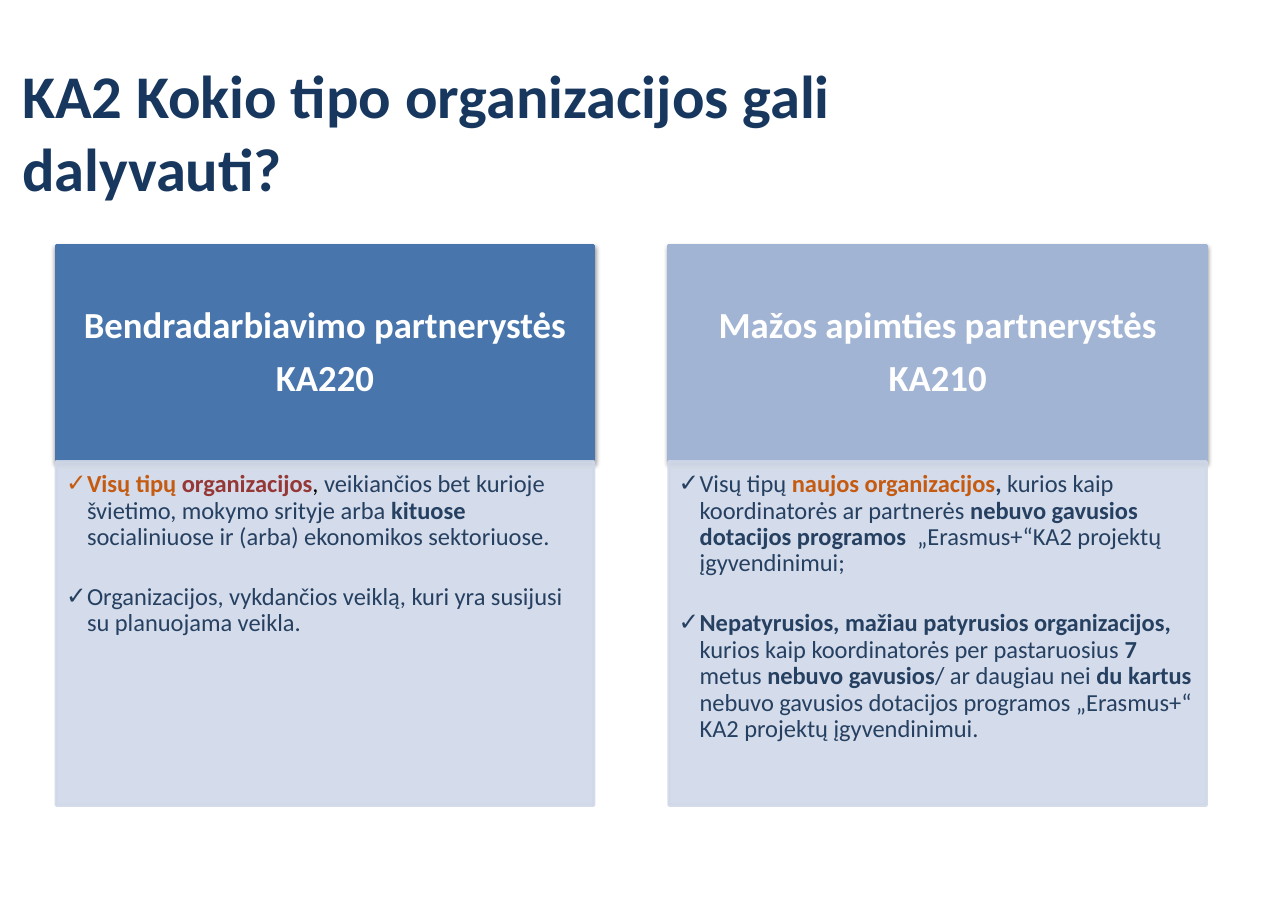
from lxml import etree
from pptx import Presentation
from pptx.dml.color import RGBColor
from pptx.enum import shapes, text
from pptx.oxml import parse_xml
from pptx.oxml.ns import nsdecls, qn
from pptx.util import Inches, Pt

NAVY = RGBColor(0x17, 0x37, 0x5E)
INK = RGBColor(0x25, 0x40, 0x61)
BLUE = RGBColor(0x48, 0x75, 0xAC)
PALE_BLUE = RGBColor(0xA2, 0xB4, 0xD4)
PANEL = RGBColor(0xD0, 0xD8, 0xE8)
ORANGE = RGBColor(0xC5, 0x5A, 0x11)
RED = RGBColor(0x95, 0x37, 0x35)
BLACK = RGBColor(0, 0, 0)
WHITE = RGBColor(0xFF, 0xFF, 0xFF)

COL_W, HEAD_H, BODY_H = 4.88, 1.95, 3.12
COL_X, COL_Y, COL_STEP = 0.51, 2.23, 5.56

# Each run is (text, format); plain dark text is the default
B = dict(bold=True)
COLUMNS = [
    (BLUE, ["Bendradarbiavimo partnerystės", "KA220"], [
        [("Visų tipų ", dict(bold=True, color=ORANGE)),
         ("organizacijos", dict(bold=True, color=RED)),
         (", ", dict(color=BLACK)),
         ("veikiančios bet kurioje švietimo, mokymo srityje arba ", {}),
         ("kituose", B),
         (" socialiniuose ir (arba) ekonomikos sektoriuose.", {})],
        [("Organizacijos, vykdančios veiklą, kuri yra susijusi su planuojama veikla.", {})],
    ]),
    (PALE_BLUE, ["Mažos apimties partnerystės", "KA210"], [
        [("Visų tipų ", {}),
         ("naujos organizacijos", dict(bold=True, color=ORANGE)),
         (", ", B),
         ("kurios kaip koordinatorės ar partnerės ", {}),
         ("nebuvo gavusios dotacijos programos", B),
         ("  „Erasmus+“KA2 projektų įgyvendinimui;", {})],
        [("Nepatyrusios, mažiau patyrusios organizacijos, ", B),
         ("kurios kaip koordinatorės per pastaruosius ", {}),
         ("7 ", B),
         ("metus ", {}),
         ("nebuvo gavusios", B),
         ("/ ar daugiau nei ", {}),
         ("du kartus", B),
         (" nebuvo gavusios dotacijos programos „Erasmus+“ KA2 projektų įgyvendinimui.", {})],
    ]),
]


def add_run(p, words, size=16, color=INK, bold=False):
    r = p.add_run()
    r.text = words
    r.font.name = "Calibri"
    r.font.size = Pt(size)
    r.font.bold = bold
    r.font.color.rgb = color


def place(sp, x, y, w, h):
    sp.left, sp.top, sp.width, sp.height = (Inches(v) for v in (x, y, w, h))


def set_frame(tf, anchor, left, top, right, bottom):
    tf.word_wrap = True
    tf.auto_size = text.MSO_AUTO_SIZE.NONE
    tf.vertical_anchor = anchor
    tf.margin_left, tf.margin_top = Inches(left), Inches(top)
    tf.margin_right, tf.margin_bottom = Inches(right), Inches(bottom)


def paint(sp, color, opacity=100):
    sp.fill.solid()
    sp.fill.fore_color.rgb = color
    sp.line.color.rgb = color
    sp.line.width = Pt(2)
    if opacity < 100:
        for clr in sp.element.spPr.iter(qn("a:srgbClr")):
            etree.SubElement(clr, qn("a:alpha")).set("val", str(opacity * 1000))


def add_shadow(sp):
    sp.element.spPr.append(parse_xml(
        f'<a:effectLst {nsdecls("a")}>'
        f'<a:outerShdw blurRad="{Pt(3.1)}" dist="{Pt(1.6)}" dir="5400000" rotWithShape="0">'
        '<a:srgbClr val="000000"><a:alpha val="38000"/></a:srgbClr>'
        '</a:outerShdw></a:effectLst>'))


def add_check_bullet(p):
    pPr = p._p.get_or_add_pPr()
    pPr.set("marL", str(Inches(0.19)))
    pPr.set("indent", str(-Inches(0.19)))
    etree.SubElement(pPr, qn("a:buChar")).set("char", "✓")


def fill_title(sp, x, y, w, h):
    place(sp, x, y, w, h)
    set_frame(sp.text_frame, text.MSO_ANCHOR.MIDDLE, 0.11, 0.06, 0.11, 0.06)
    p = sp.text_frame.paragraphs[0]
    p.alignment = text.PP_ALIGN.LEFT
    add_run(p, "KA2 Kokio tipo organizacijos gali dalyvauti?", 39.6, NAVY, True)


def fill_column(s, body, x, y, color, heading, items):
    # Heading block
    head = s.shapes.add_shape(shapes.MSO_SHAPE.RECTANGLE, 0, 0, 0, 0)
    place(head, x, y, COL_W, HEAD_H)
    paint(head, color)
    add_shadow(head)
    body.element.addprevious(head.element)
    tf = head.text_frame
    set_frame(tf, text.MSO_ANCHOR.MIDDLE, 0.19, 0.11, 0.19, 0.11)
    for i, line in enumerate(heading):
        p = tf.add_paragraph() if i else tf.paragraphs[0]
        p.alignment = text.PP_ALIGN.CENTER
        p.line_spacing = 0.9
        p.space_after = Pt(8.4)
        add_run(p, line, 24, WHITE, True)

    # Check list panel
    place(body, x, y + HEAD_H + 0.01, COL_W, BODY_H)
    paint(body, PANEL, 90)
    tf = body.text_frame
    set_frame(tf, text.MSO_ANCHOR.TOP, 0.09, 0.09, 0.12, 0.14)
    for i, runs in enumerate(items):
        p = tf.add_paragraph() if i else tf.paragraphs[0]
        add_check_bullet(p)
        p.line_spacing = 0.9
        p.space_before = Pt(22 if i else 0)
        for words, fmt in runs:
            add_run(p, words, **fmt)


def main():
    prs = Presentation()
    prs.slide_width, prs.slide_height = Inches(11.69), Inches(8.27)
    s = prs.slides.add_slide(prs.slide_layouts[3])
    title, *bodies = list(s.placeholders)[:3]
    fill_title(title, 0.09, 0.5, 9.93, 1.38)
    for i, (body, column) in enumerate(zip(bodies, COLUMNS)):
        fill_column(s, body, COL_X + i * COL_STEP, COL_Y, *column)
    prs.save("out.pptx")


if __name__ == "__main__":
    main()
